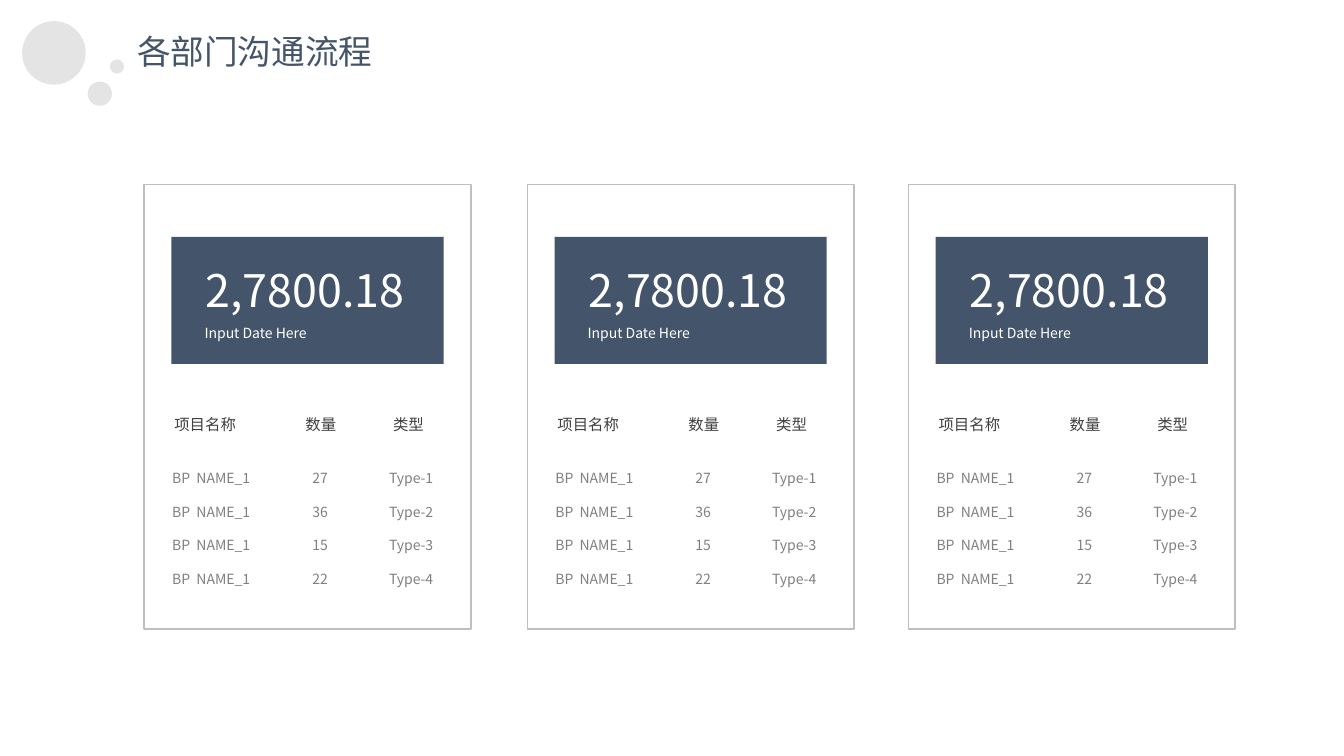
from dataclasses import dataclass

from lxml import etree
from pptx import Presentation, util as u
from pptx.dml import color, fill
from pptx.enum import shapes, text
from pptx.oxml import ns

FONT = "Noto Sans CJK SC"
COLORS = {
    "bubble": "D9D9D9",
    "navy": "44546A",
    "frame": "BFBFBF",
    "white": "FFFFFF",
    "heading": "404040",
    "detail": "808080",
}


@dataclass(frozen=True)
class Bubble:
    left: float
    top: float
    size: float


@dataclass(frozen=True)
class Label:
    """Text with its left edge measured from the left of its card."""
    lines: tuple[str, ...]
    left: float
    top: float
    width: float
    height: float
    size: int
    color: str
    spacing: float = 1.0
    align: text.PP_ALIGN = text.PP_ALIGN.LEFT
    wrap: bool = False


@dataclass(frozen=True)
class Column:
    heading: str
    values: tuple[str, ...]
    heading_left: float
    heading_width: float
    values_left: float
    values_width: float

    def labels(self) -> list[Label]:
        return [
            Label((self.heading,), self.heading_left, 4.07,
                  self.heading_width, 0.29, 11, "heading"),
            Label(self.values, self.values_left, 4.44,
                  self.values_width, 1.38, 10, "detail", spacing=2.0),
        ]


BUBBLES = [Bubble(0.22, 0.21, 0.63), Bubble(0.87, 0.81, 0.24), Bubble(1.09, 0.59, 0.14)]
TITLE = Label(("各部门沟通流程",), 1.26, 0.26, 2.56, 0.5, 24, "navy")
CARD_LEFTS = [1.43, 5.23, 9.01]
COLUMNS = [
    Column("项目名称", ("BP  NAME_1",) * 4, 0.2, 0.82, 0.18, 0.99),
    Column("数量", ("27", "36", "15", "22"), 1.5, 0.51, 1.57, 0.36),
    Column("类型", tuple(f"Type-{n}" for n in range(1, 5)), 2.37, 0.51, 2.33, 0.65),
]
CARD_LABELS = [
    Label(("2,7800.18",), 0.51, 2.56, 2.19, 0.64, 32, "white"),
    Label(("Input Date Here",), 0.5, 3.17, 1.45, 0.27, 10, "white",
          align=text.PP_ALIGN.JUSTIFY, wrap=True),
    *(label for column in COLUMNS for label in column.labels()),
]


def rgb(name: str) -> color.RGBColor:
    return color.RGBColor.from_string(COLORS[name])


def set_opacity(f: fill.FillFormat, percent: int) -> None:
    clr = f._xPr.find(ns.qn("a:solidFill"))[0]
    etree.SubElement(clr, ns.qn("a:alpha"), val=str(percent * 1000))


def write_label(sp, label: Label) -> None:
    tf = sp.text_frame
    tf.text = "\n".join(label.lines)
    tf.word_wrap = label.wrap
    tf.auto_size = text.MSO_AUTO_SIZE.SHAPE_TO_FIT_TEXT
    tf.vertical_anchor = text.MSO_ANCHOR.TOP
    for p in tf.paragraphs:
        p.alignment = label.align
        p.line_spacing = label.spacing
        p.font.name = FONT
        p.font.size = u.Pt(label.size)
        p.font.color.rgb = rgb(label.color)
        latin = p._p.pPr.find(ns.qn("a:defRPr")).find(ns.qn("a:latin"))
        latin.addnext(latin.makeelement(ns.qn("a:ea"), {"typeface": FONT}))


def add_label(s, label: Label, card_left: float) -> None:
    sp = s.shapes.add_textbox(u.Inches(card_left + label.left), u.Inches(label.top),
                              u.Inches(label.width), u.Inches(label.height))
    write_label(sp, label)


def add_bubble(s, bubble: Bubble) -> None:
    sp = s.shapes.add_shape(shapes.MSO_SHAPE.FLOWCHART_CONNECTOR,
                            u.Inches(bubble.left), u.Inches(bubble.top),
                            u.Inches(bubble.size), u.Inches(bubble.size))
    sp.shadow.inherit = False
    sp.fill.solid()
    sp.fill.fore_color.rgb = rgb("bubble")
    set_opacity(sp.fill, 70)
    sp.line.fill.background()


def add_box(s, left: float, top: float, width: float, height: float):
    sp = s.shapes.add_shape(shapes.MSO_SHAPE.ROUNDED_RECTANGLE, u.Inches(left),
                            u.Inches(top), u.Inches(width), u.Inches(height))
    sp.adjustments[0] = 0
    sp.shadow.inherit = False
    return sp


def add_card(s, left: float) -> None:
    panel = add_box(s, left + 0.27, 2.35, 2.7, 1.26)
    panel.fill.solid()
    panel.fill.fore_color.rgb = rgb("navy")
    panel.line.fill.background()
    frame = add_box(s, left, 1.83, 3.24, 4.41)
    frame.fill.background()
    frame.line.color.rgb = rgb("frame")
    frame.line.width = u.Pt(1)
    for label in CARD_LABELS:
        add_label(s, label, left)


def main() -> None:
    prs = Presentation()
    prs.slide_width, prs.slide_height = u.Inches(13.33), u.Inches(7.5)
    s = prs.slides.add_slide(prs.slide_layouts.get_by_name("Title Only"))
    for bubble in BUBBLES:
        add_bubble(s, bubble)
    title = s.shapes.title
    title.left, title.top = u.Inches(TITLE.left), u.Inches(TITLE.top)
    title.width, title.height = u.Inches(TITLE.width), u.Inches(TITLE.height)
    write_label(title, TITLE)
    for left in CARD_LEFTS:
        add_card(s, left)
    prs.save("out.pptx")


if __name__ == "__main__":
    main()
